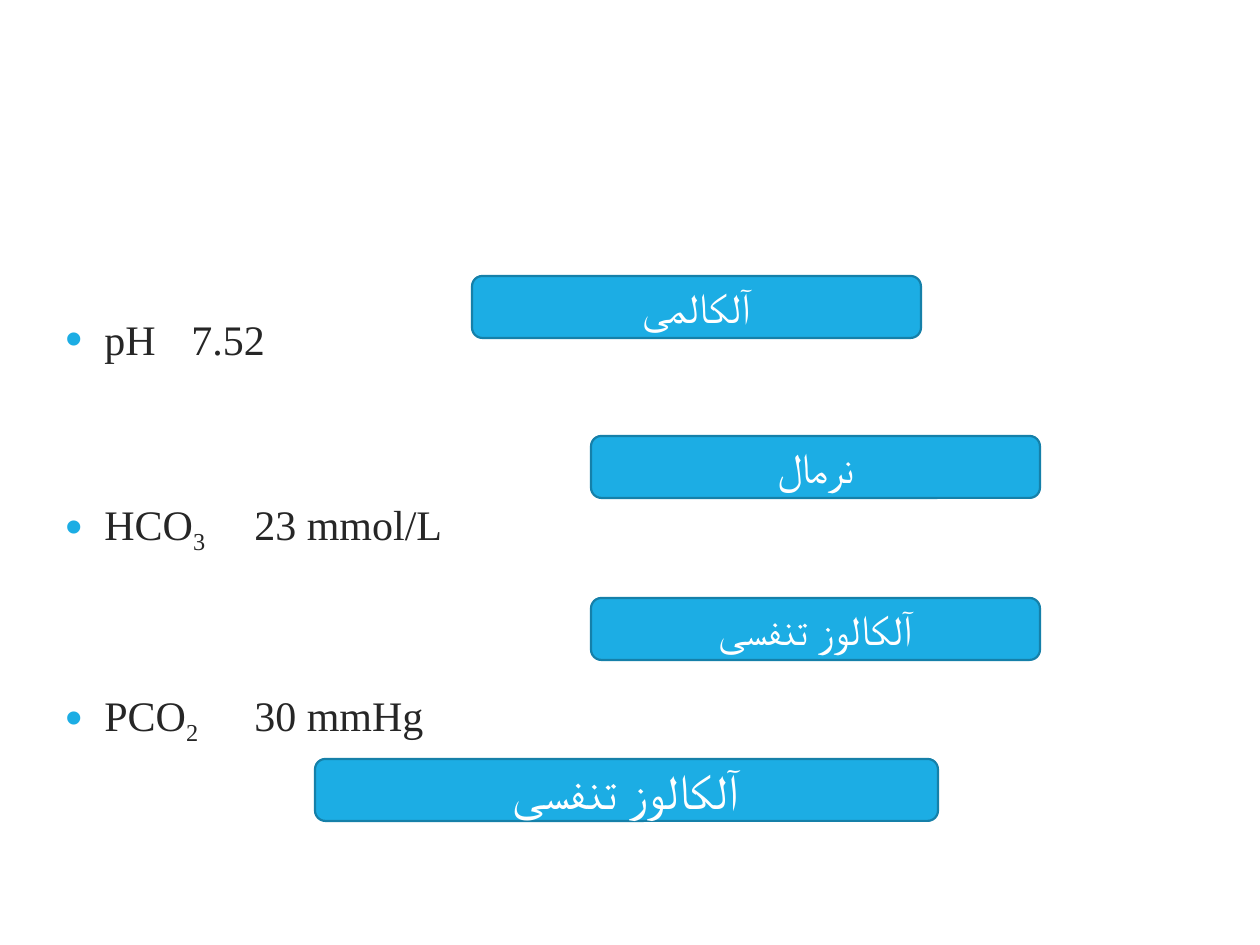
from dataclasses import dataclass

from lxml import etree
from pptx import Presentation
from pptx.dml.color import RGBColor
from pptx.enum.shapes import MSO_SHAPE
from pptx.enum.text import MSO_ANCHOR, PP_ALIGN
from pptx.oxml.ns import qn
from pptx.util import Pt


@dataclass(frozen=True)
class Theme:
    font: str = "Times New Roman"
    ink: RGBColor = RGBColor(0x26, 0x26, 0x26)
    accent: RGBColor = RGBColor(0x1C, 0xAD, 0xE4)
    outline: RGBColor = RGBColor(0x15, 0x80, 0xA9)
    label: RGBColor = RGBColor(0xFF, 0xFF, 0xFF)
    body_size: int = 24
    diagnosis_size: int = 28


THEME = Theme()
SCALE = 914400 / 126


def px(length):
    return round(length * SCALE)


def add_run(paragraph, text, size, color):
    run = paragraph.add_run()
    run.text = text
    run.font.name = THEME.font
    run.font.size = Pt(size)
    run.font.color.rgb = color
    return run


prs = Presentation()
prs.slide_width, prs.slide_height = px(1260), px(945)
slide = prs.slides.add_slide(prs.slide_layouts[6])

# Blood gas values: (name, subscript, value)
readings = [
    ("pH\t7.52\t", "", ""),
    ("HCO", "3\t", "23 mmol/L"),
    ("PCO", "2\t", "30 mmHg"),
]
values = slide.shapes.add_textbox(px(53), px(199), px(1134), px(683)).text_frame
values.word_wrap = True
values.margin_top = px(14)
for row, reading in enumerate(readings):
    line = values.add_paragraph() if row else values.paragraphs[0]
    properties = line._p.get_or_add_pPr()
    properties.set("marL", str(px(39)))
    properties.set("indent", str(-px(39)))
    bullet_color = etree.SubElement(properties, qn("a:buClr"))
    etree.SubElement(bullet_color, qn("a:srgbClr"), val=str(THEME.accent))
    etree.SubElement(properties, qn("a:buSzPct"), val="115000")
    etree.SubElement(properties, qn("a:buFont"), typeface="Arial")
    etree.SubElement(properties, qn("a:buChar"), char="•")
    line.line_spacing = 3.0
    line.space_after = Pt(6)
    if row:
        line.space_before = Pt(5)
    for part, text in enumerate(reading):
        if text:
            run = add_run(line, text, THEME.body_size, THEME.ink)
            if part == 1:
                run.font._element.set("baseline", "-25000")

# Interpretations: (text, left, top, width, type size)
interpretations = [
    ("آلکالمی", 472, 276, 449, THEME.body_size),
    ("نرمال", 591, 436, 449, THEME.body_size),
    ("آلکالوز تنفسی", 591, 598, 449, THEME.body_size),
    ("آلکالوز تنفسی", 315, 759, 623, THEME.diagnosis_size),
]
for text, left, top, width, size in interpretations:
    badge = slide.shapes.add_shape(
        MSO_SHAPE.ROUNDED_RECTANGLE, px(left), px(top), px(width), px(62))
    badge.shadow.inherit = False
    badge.fill.solid()
    badge.fill.fore_color.rgb = THEME.accent
    badge.line.color.rgb = THEME.outline
    badge.line.width = Pt(1.25)
    badge.text_frame.word_wrap = True
    badge.text_frame.vertical_anchor = MSO_ANCHOR.MIDDLE
    caption = badge.text_frame.paragraphs[0]
    caption.alignment = PP_ALIGN.CENTER
    add_run(caption, text, size, THEME.label)

prs.save("out.pptx")
